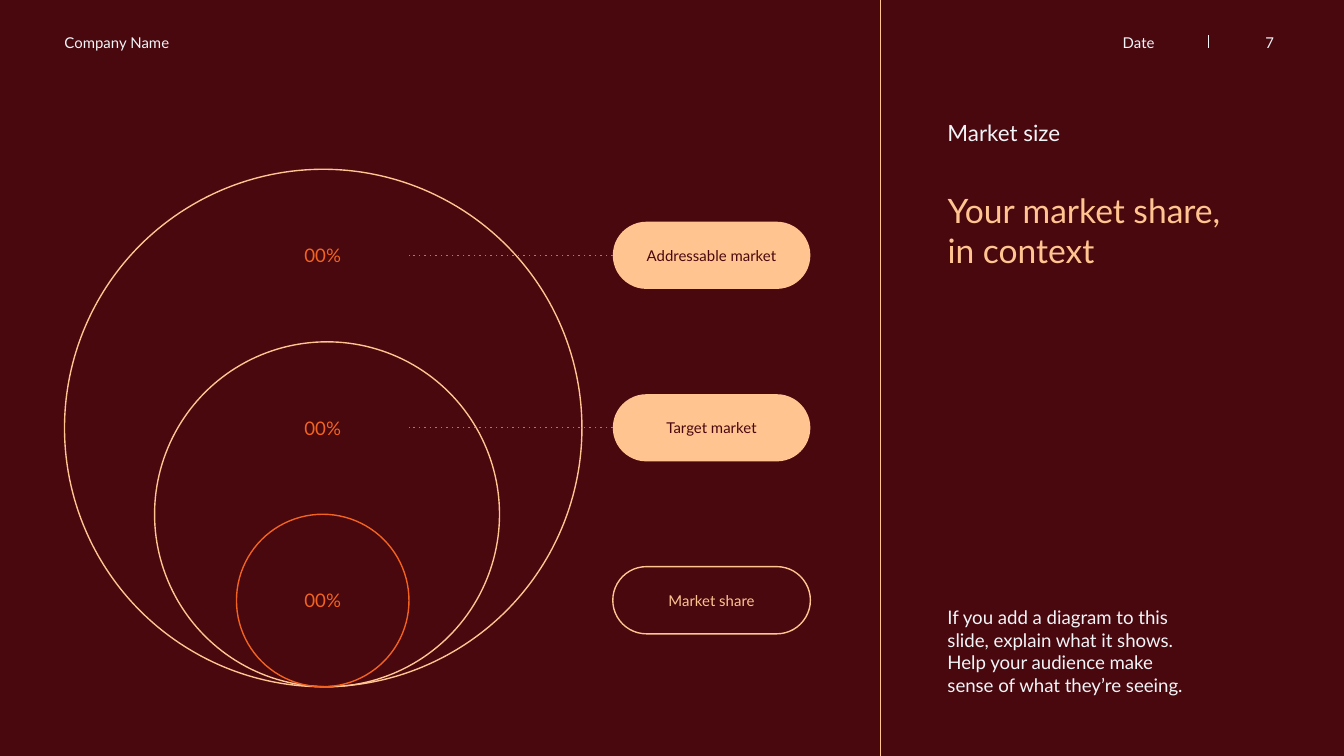
from lxml import etree
from pptx import Presentation
from pptx.dml.color import RGBColor
from pptx.enum.dml import MSO_LINE
from pptx.enum.shapes import MSO_CONNECTOR, MSO_SHAPE
from pptx.enum.text import MSO_ANCHOR, PP_ALIGN
from pptx.oxml.ns import qn
from pptx.util import Inches, Pt

OVAL, PILL = MSO_SHAPE.OVAL, MSO_SHAPE.ROUNDED_RECTANGLE
STRAIGHT, DOT = MSO_CONNECTOR.STRAIGHT, MSO_LINE.ROUND_DOT
TOP, MIDDLE = MSO_ANCHOR.TOP, MSO_ANCHOR.MIDDLE
LEFT, CENTER, RIGHT = PP_ALIGN.LEFT, PP_ALIGN.CENTER, PP_ALIGN.RIGHT

FONT = "Lato"
WINE, PEACH, ORANGE, PALE = "49070E", "FFC490", "F2631F", "F1F5F8"
WIDTH = 10
HEIGHT = WIDTH * 9 / 16
ROW = 1.26
RING = 3.85 / 3


def color(code):
    return RGBColor.from_string(code)


def write(shape, text, size, code, align=LEFT, anchor=TOP, inset=0):
    frame = shape.text_frame
    frame.text = text
    frame.word_wrap = True
    frame.vertical_anchor = anchor
    frame.margin_left = frame.margin_right = Inches(inset)
    frame.margin_top = frame.margin_bottom = Inches(inset)
    for para in frame.paragraphs:
        para.alignment = align
        para.line_spacing = 1.0
        para.space_before = Pt(0)
        for run in para.runs:
            run.font.name = FONT
            run.font.size = Pt(size)
            run.font.color.rgb = color(code)


def add_title(slide, text, x, y, w, h):
    title = slide.shapes.title
    title.left, title.top = Inches(x), Inches(y)
    title.width, title.height = Inches(w), Inches(h)
    write(title, text, 18, PEACH)


def add_text(slide, text, x, y, w, h, size=8, align=LEFT):
    box = slide.shapes.add_textbox(Inches(x), Inches(y), Inches(w), Inches(h))
    write(box, text, size, PALE, align)


def add_shape(slide, kind, x, y, w, h, fill=None, line=None):
    shape = slide.shapes.add_shape(kind, Inches(x), Inches(y), Inches(w), Inches(h))
    shape.shadow.inherit = False
    if fill:
        shape.fill.solid()
        shape.fill.fore_color.rgb = color(fill)
    else:
        shape.fill.background()
    if line:
        shape.line.color.rgb = color(line)
        shape.line.width = Pt(0.75)
    else:
        shape.line.fill.background()
    return shape


def add_line(slide, x1, y1, x2, y2, code, dotted=False):
    line = slide.shapes.add_connector(
        STRAIGHT, Inches(x1), Inches(y1), Inches(x2), Inches(y2))
    line.line.color.rgb = color(code)
    line.line.width = Pt(0.75)
    props = line._element.spPr
    if dotted:
        line.line.dash_style = DOT
        props.find(".//" + qn("a:prstDash")).set("val", "dot")
    etree.SubElement(props, qn("a:effectLst"))
    return line


def add_rings(slide):
    for x, index, code in ((0.48, 0, PEACH), (1.15, 1, PEACH), (1.76, 2, ORANGE)):
        size = (3 - index) * RING
        add_shape(slide, OVAL, x, ROW + index * RING, size, size, line=code)


def add_level(slide, index, label, full):
    y = ROW + index * RING
    share = add_shape(slide, OVAL, 1.76, y, RING, RING)
    write(share, "00%", 10, ORANGE, CENTER, MIDDLE, 0.1)
    pill = add_shape(slide, PILL, 4.56, y + 0.39, 1.47, 0.5,
                     fill=PEACH if full else None, line=None if full else PEACH)
    pill.adjustments[0] = 0.5
    write(pill, label, 8, WINE if full else PEACH, CENTER, MIDDLE, 0.1)
    if full:
        mid = y + 0.64
        link = add_line(slide, 4.56, mid, 3.04, mid, ORANGE, True)
        link.begin_connect(pill, 1)


def main():
    deck = Presentation()
    deck.slide_width, deck.slide_height = Inches(WIDTH), Inches(HEIGHT)
    slide = deck.slides.add_slide(deck.slide_layouts[5])
    slide.background.fill.solid()
    slide.background.fill.fore_color.rgb = color(WINE)

    add_text(slide, "Company Name", 0.48, 0.25, 2.07, 0.25)
    add_text(slide, "Date", 7.44, 0.25, 1.15, 0.16, align=RIGHT)
    add_line(slide, 8.99, 0.26, 8.99, 0.36, PALE)
    add_text(slide, "7", 9.06, 0.25, 0.42, 0.25, align=RIGHT)

    add_line(slide, 6.55, 0, 6.55, HEIGHT, PEACH)
    add_text(slide, "Market size", 7.05, 0.89, 2.44, 0.27, 12)
    add_title(slide, "Your market share,\vin context", 7.05, 1.41, 2.44, 0.61)
    add_text(slide, "If you add a diagram to this slide, explain what it shows. "
             "Help your audience make sense of what they’re seeing.",
             7.05, 4.51, 1.87, 0.86, 10)

    add_rings(slide)
    levels = (("Addressable market", True), ("Target market", True),
              ("Market share", False))
    for index, (label, full) in enumerate(levels):
        add_level(slide, index, label, full)

    deck.save("out.pptx")


if __name__ == "__main__":
    main()
